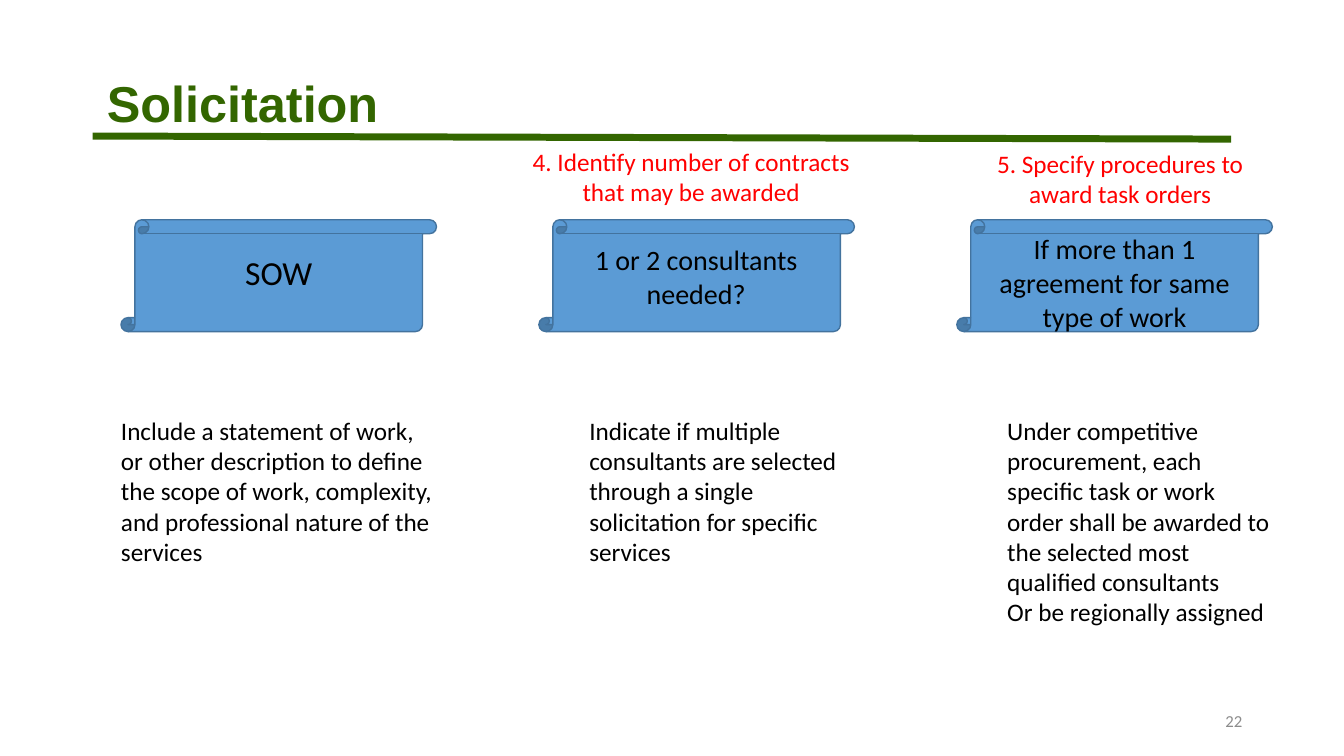
from lxml.etree import SubElement
from pptx import Presentation
from pptx.dml.color import RGBColor
from pptx.enum.shapes import MSO_CONNECTOR, MSO_SHAPE
from pptx.enum.text import MSO_ANCHOR, MSO_AUTO_SIZE, PP_ALIGN
from pptx.oxml.ns import qn
from pptx.util import Inches, Pt

GREEN = RGBColor(0x33, 0x66, 0x00)
BLUE = RGBColor(0x5B, 0x9B, 0xD5)
BLUE_EDGE = RGBColor(0x43, 0x73, 0x9E)
RED = RGBColor(0xFF, 0x00, 0x00)
BLACK = RGBColor(0x00, 0x00, 0x00)
GREY = RGBColor(0x8C, 0x8C, 0x8C)

COL_LEFT, COL_WIDTH, COL_PITCH = 1.2, 3.13, 4.145
SCROLL_TOP, SCROLL_HEIGHT = 2.18, 1.11

COLUMNS = [
    dict(label="SOW", label_box=(0.33, 0.27, 2.47, 0.5), label_size=24,
         body=["Include a statement of work, or other description to define the scope "
               "of work, complexity, and professional nature of the services"],
         body_height=1.57),
    dict(label="1 or 2 consultants needed?", label_box=(0.22, 0.18, 2.68, 0.77),
         body=["Indicate if multiple consultants are selected through a single "
               "solicitation for specific services"],
         body_height=1.57, indent=0.5,
         caption="4. Identify number of contracts that may be awarded",
         caption_box=(-0.18, -0.78, 3.38, 0.71)),
    dict(label="If more than 1 agreement for same type of work",
         label_box=(0.08, 0.07, 2.97, 1.11),
         body=["Under competitive procurement, each specific task or work order shall "
               "be awarded to the selected most qualified consultants",
               "Or be regionally assigned"],
         body_height=2.17, indent=0.5,
         caption="5. Specify procedures to award task orders",
         caption_box=(0, -0.76, 3.24, 0.71)),
]


def format_text(sp, lines, size=18, color=BLACK, font="Calibri", bold=False,
                align=PP_ALIGN.LEFT, anchor=MSO_ANCHOR.TOP,
                insets=(0.1, 0.05, 0.1, 0.05)):
    """Fill a shape with one paragraph per line in the given format."""
    tf = sp.text_frame
    tf.word_wrap = True
    tf.auto_size = MSO_AUTO_SIZE.NONE
    tf.vertical_anchor = anchor
    tf.margin_left, tf.margin_top, tf.margin_right, tf.margin_bottom = map(Inches, insets)
    tf.text = "\n".join(lines)
    for p in tf.paragraphs:
        p.alignment = align
        p.font.name, p.font.size, p.font.bold = font, Pt(size), bold
        p.font.color.rgb = color


def add_text(s, box, lines, **style):
    """Add a formatted text box at the given left, top, width and height."""
    format_text(s.shapes.add_textbox(*map(Inches, box)), lines, **style)


def add_header(s, left, top, width, height, text):
    """Place the title and the green rule under it."""
    title = s.shapes.title
    title.left, title.top, title.width, title.height = map(Inches, (left, top, width, height))
    format_text(title, [text], size=36, color=GREEN, font="Arial", bold=True,
                anchor=MSO_ANCHOR.BOTTOM, insets=(0.09, 0.04, 0.09, 0.04))
    bottom = top + height
    rule = s.shapes.add_connector(
        MSO_CONNECTOR.STRAIGHT, Inches(left - 0.05), Inches(bottom - 0.01),
        Inches(left + width - 0.06), Inches(bottom + 0.02))
    rule.line.color.rgb, rule.line.width = GREEN, Pt(5)
    SubElement(rule._element.spPr, qn("a:effectLst"))


def add_column(s, left, top, width, height, label, label_box, body, body_height,
               label_size=20, indent=0, caption=None, caption_box=None):
    """Place a scroll with its label, the body below and any caption above."""
    def inside(box):
        """Shift a box by the corner of the scroll."""
        return (left + box[0], top + box[1], *box[2:])

    scroll = s.shapes.add_shape(MSO_SHAPE.VERTICAL_SCROLL,
                                *map(Inches, (left, top, width, height)))
    scroll.shadow.inherit = False
    scroll.fill.solid()
    scroll.fill.fore_color.rgb = BLUE
    scroll.line.color.rgb, scroll.line.width = BLUE_EDGE, Pt(1)
    add_text(s, inside(label_box), [label], size=label_size, align=PP_ALIGN.CENTER)
    add_text(s, inside((0, 1.94, width, body_height)), body, insets=(indent, 0, 0, 0.05))
    if caption:
        add_text(s, inside(caption_box), [caption], color=RED, align=PP_ALIGN.CENTER)


def main():
    """Build and save the slide."""
    prs = Presentation()
    prs.slide_width, prs.slide_height = Inches(13.33), Inches(7.5)
    s = prs.slides.add_slide(prs.slide_layouts.get_by_name("Title Only"))
    add_header(s, 0.97, 0.22, 11.3, 1.14, "Solicitation")
    for i, column in enumerate(COLUMNS):
        add_column(s, COL_LEFT + i * COL_PITCH, SCROLL_TOP, COL_WIDTH, SCROLL_HEIGHT, **column)
    add_text(s, (9.42, 6.95, 3, 0.4), ["22"], size=12, color=GREY,
             align=PP_ALIGN.RIGHT, anchor=MSO_ANCHOR.MIDDLE)
    prs.save("out.pptx")


if __name__ == "__main__":
    main()
